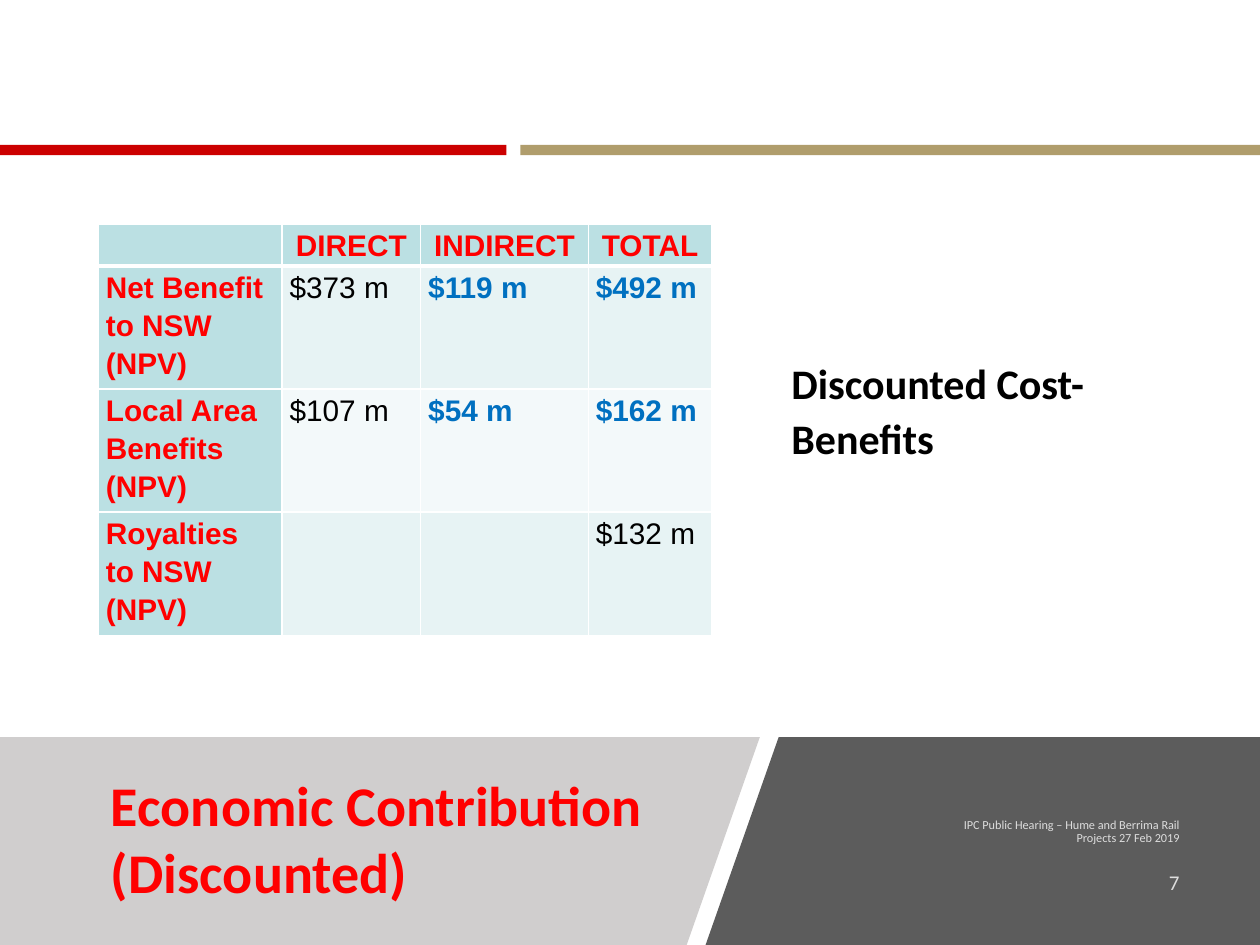
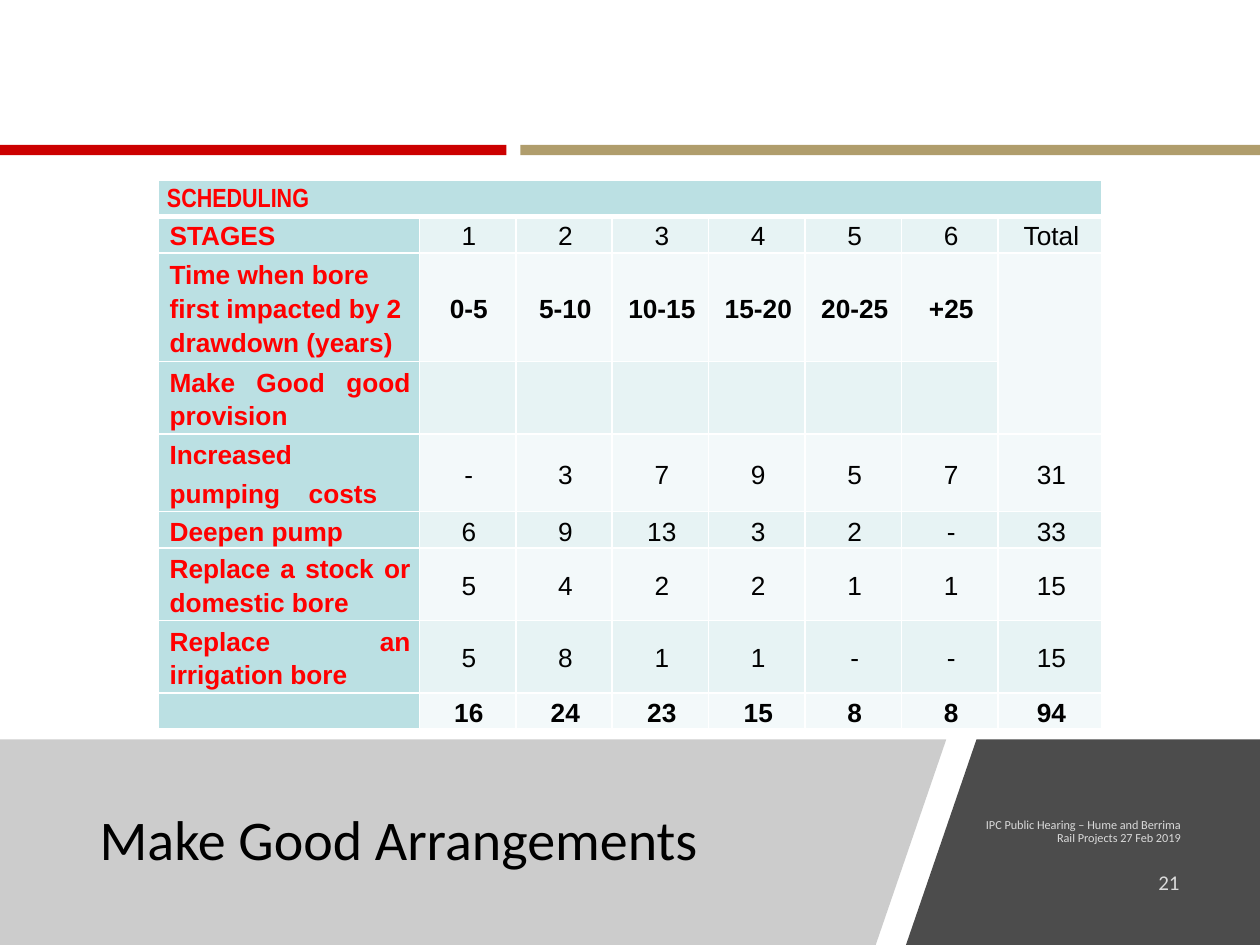
"""Build two hearing slides: discounted economics and make good stages."""
import dataclasses

import lxml.etree
import pptx
import pptx.dml.color
import pptx.enum.shapes
import pptx.enum.text
import pptx.oxml.ns
import pptx.util

Pt = pptx.util.Pt
qn = pptx.oxml.ns.qn
Align = pptx.enum.text.PP_ALIGN
Anchor = pptx.enum.text.MSO_ANCHOR


@dataclasses.dataclass(frozen=True)
class Theme:
    """Colours, fonts and type sizes of both slides."""
    red: str = "FF0000"
    blue: str = "0070C0"
    black: str = "000000"
    white: str = "FFFFFF"
    rule: str = "CC0000"
    gold: str = "B09D6C"
    head: str = "BBE0E3"
    odd: str = "E7F3F4"
    even: str = "F3F9FA"
    sans: str = "Calibri"
    grid: str = "Arial"
    slim: str = "Arial Narrow"
    title: int = 32
    body: int = 24
    page: int = 12
    foot: int = 7


THEME = Theme()
FOOT = "IPC Public Hearing – Hume and Berrima Rail Projects 27 Feb 2019"
RULES = [(0, 289.4, THEME.rule), (297.4, 422.6, THEME.gold)]

SLIDES = [
    {
        "title": "Economic Contribution (Discounted)",
        "box": (56.2, 435.6, 336.2, 86.4), "tint": THEME.red, "bold": True,
        "note": "Discounted Cost- Benefits", "page": "7",
        "foot": (525.6, 155.5), "top": 421.2,
        "dark": ((445, 720), (403.2, 720), "404040", 85),
        "light": ((0, 434.2), (0, 392.4), "D0CECE", 100),
        "table": {
            "at": (56.2, 128.2), "size": 17, "pad": 4.3, "nudge": 0,
            "cols": [105, 79.2, 95.8, 70.6], "rows": [23.8, 69.8, 69.8, 46.8],
            "cells": [
                ["", "DIRECT", "INDIRECT", "TOTAL"],
                ["Net Benefit to NSW (NPV)", "$373 m", "$119 m", "$492 m"],
                ["Local Area Benefits (NPV)", "$107 m", "$54 m", "$162 m"],
                ["Royalties to NSW (NPV)", "", "", "$132 m"],
            ],
            "bold": {(r, c) for r in (1, 2) for c in (2, 3)},
            "accent": THEME.blue, "anchor": Anchor.TOP, "merge": [],
            "align": (Align.CENTER, Align.LEFT, Align.LEFT), "left": set(),
            "head": THEME.grid,
        },
    },
    {
        "title": "Make Good Arrangements",
        "box": (49.7, 435.6, 455.8, 86.4), "tint": THEME.black, "bold": False,
        "note": "", "page": "21",
        "foot": (555.8, 126), "top": 422.6,
        "light": ((0, 540.7), (0, 500.4), "808080", 40),
        "dark": ((558, 720), (517.7, 720), "000000", 70),
        "table": {
            "at": (90.4, 103), "size": 15, "pad": 5, "nudge": 1.5,
            "cols": [149.2] + [55.15] * 6 + [59.4],
            "rows": [18.7, 18.7, 59, 38.9, 41.8, 18.7, 38.9, 38.9, 18.7],
            "cells": [
                ["SCHEDULING"] + [""] * 7,
                ["STAGES", "1", "2", "3", "4", "5", "6", "Total"],
                ["Time when bore first impacted by 2 drawdown (years)",
                 "0-5", "5-10", "10-15", "15-20", "20-25", "+25", ""],
                ["Make Good good provision"] + [""] * 7,
                ["Increased\npumping\tcosts",
                 "-", "3", "7", "9", "5", "7", "31"],
                ["Deepen pump", "6", "9", "13", "3", "2", "-", "33"],
                ["Replace a stock or domestic bore",
                 "5", "4", "2", "2", "1", "1", "15"],
                ["Replace an irrigation bore",
                 "5", "8", "1", "1", "-", "-", "15"],
                ["", "16", "24", "23", "15", "8", "8", "94"],
            ],
            "bold": {(r, c) for r in (2, 8) for c in range(1, 8)},
            "accent": THEME.black, "anchor": Anchor.MIDDLE,
            "merge": [((0, 0), (0, 7)), ((2, 7), (3, 7))],
            "align": (Align.JUSTIFY, Align.JUSTIFY, Align.CENTER),
            "left": {(2, 0)}, "head": THEME.slim,
        },
    },
]


def tone(code):
    """Return a colour from its hex code."""
    return pptx.dml.color.RGBColor.from_string(code)


def fade(node, share):
    """Make the first plain colour in a node partly clear."""
    mark = next(node.iter(qn("a:srgbClr")))
    lxml.etree.SubElement(mark, qn("a:alpha"), val=str(share * 1000))


def write(para, text, size, tint, face=THEME.sans, bold=False):
    """Add one styled run."""
    run = para.add_run()
    run.text = text
    run.font.size, run.font.name, run.font.bold = Pt(size), face, bold
    run.font.color.rgb = tone(tint)
    return run


def paint(shape, tint, share=100):
    """Give a shape a flat fill without line or shadow."""
    shape.shadow.inherit = False
    shape.fill.solid()
    shape.fill.fore_color.rgb = tone(tint)
    shape.line.fill.background()
    if share < 100:
        fade(shape._element.spPr, share)


def add_rules(slide):
    """Draw the two coloured rules near the top."""
    for left, wide, tint in RULES:
        kind = pptx.enum.shapes.MSO_SHAPE.RECTANGLE
        paint(slide.shapes.add_shape(
            kind, Pt(left), Pt(82.8), Pt(wide), Pt(5.8)), tint)


def add_band(slide, top, band):
    """Draw a slanted band from its upper and lower edges."""
    (ul, ur), (ll, lr), tint, share = band
    form = slide.shapes.build_freeform(Pt(ul), Pt(top), scale=1.0)
    form.add_line_segments(
        [(Pt(ur), Pt(top)), (Pt(lr), Pt(540)), (Pt(ll), Pt(540))], close=True)
    paint(form.convert_to_shape(), tint, share)


def fill_holder(holder, box, text, size, tint, bold):
    """Place a placeholder and write its text."""
    holder.left, holder.top, holder.width, holder.height = map(Pt, box)
    frame = holder.text_frame
    frame.word_wrap = True
    frame.auto_size = pptx.enum.text.MSO_AUTO_SIZE.NONE
    frame.vertical_anchor = Anchor.MIDDLE
    para = frame.paragraphs[0]
    para.alignment = Align.LEFT
    write(para, text, size, tint, bold=bold)
    return frame


def add_note(holder, text):
    """Write the side note without a bullet."""
    frame = fill_holder(holder, (445, 100.1, 236.9, 292.3), text,
                        THEME.body, THEME.black, True)
    frame.margin_bottom = Pt(30)
    para = frame.paragraphs[0]
    props = para._p.get_or_add_pPr()
    props.set("marL", "0")
    props.set("indent", "0")
    lxml.etree.SubElement(props, qn("a:buNone"))
    para.line_spacing = 1.1
    para.space_before = Pt(0)


def add_foot(slide, box, text, size, space):
    """Write a right-aligned footer line."""
    frame = slide.shapes.add_textbox(*map(Pt, box)).text_frame
    frame.word_wrap = True
    para = frame.paragraphs[0]
    para.alignment, para.line_spacing = Align.RIGHT, space
    fade(write(para, text, size, THEME.white)._r, 80)


def edge(cell, first):
    """Draw white cell borders, heavier under the first row."""
    props = cell._tc.get_or_add_tcPr()
    for side in "LRTB":
        heavy = (first and side == "B")
        line = lxml.etree.SubElement(
            props, qn("a:ln" + side), w=str(Pt(3 if heavy else 1)))
        fill = lxml.etree.SubElement(line, qn("a:solidFill"))
        lxml.etree.SubElement(fill, qn("a:srgbClr"), val=THEME.white)


def fill_cell(cell, text, row, col, grid):
    """Format one cell and write its lines."""
    top, side = row == 0, col == 0
    edge(cell, top)
    cell.fill.solid()
    shade = THEME.odd if row % 2 else THEME.even
    cell.fill.fore_color.rgb = tone(THEME.head if top or side else shade)
    cell.margin_left = Pt(grid["pad"] + (grid["nudge"] if row else 0))
    cell.margin_right = Pt(grid["pad"])
    cell.margin_top = cell.margin_bottom = 0
    cell.vertical_anchor = grid["anchor"]
    frame = cell.text_frame
    if not text:
        end = frame.paragraphs[0]._p.get_or_add_endParaRPr()
        end.set("sz", str(grid["size"] * 100))
        return
    strong = (row, col) in grid["bold"]
    tint = grid["accent"] if strong else THEME.black
    align = grid["align"][0 if top else 1 if side else 2]
    for num, line in enumerate(text.split("\n")):
        para = frame.add_paragraph() if num else frame.paragraphs[0]
        para.alignment = Align.LEFT if (row, col) in grid["left"] else align
        para.line_spacing = 1.15
        if num:
            para.space_before = Pt(3)
        if "\t" in line:
            tabs = lxml.etree.SubElement(
                para._p.get_or_add_pPr(), qn("a:tabLst"))
            lxml.etree.SubElement(
                tabs, qn("a:tab"), pos=str(Pt(79.5)), algn="l")
        write(para, line, grid["size"], THEME.red if top or side else tint,
              grid["head"] if top else THEME.grid, top or side or strong)


def add_grid(slide, grid):
    """Build a table from its rows of text."""
    cols, rows = grid["cols"], grid["rows"]
    size = (*grid["at"], sum(cols), sum(rows))
    table = slide.shapes.add_table(len(rows), len(cols), *map(Pt, size)).table
    table.horz_banding = False
    for col, wide in zip(table.columns, cols):
        col.width = Pt(wide)
    for row, high in zip(table.rows, rows):
        row.height = Pt(high)
    for r, line in enumerate(grid["cells"]):
        for c, text in enumerate(line):
            fill_cell(table.cell(r, c), text, r, c, grid)
    for start, stop in grid["merge"]:
        table.cell(*start).merge(table.cell(*stop))


def add_slide(deck, data):
    """Build one slide from its content."""
    slide = deck.slides.add_slide(deck.slide_layouts[1 if data["note"] else 5])
    add_rules(slide)
    for band in ("dark", "light"):
        add_band(slide, data["top"], data[band])
    for holder in list(slide.placeholders):
        slide.shapes._spTree.append(holder._element)
    fill_holder(slide.shapes.title, data["box"], data["title"],
                THEME.title, data["tint"], data["bold"])
    if data["note"]:
        add_note(slide.placeholders[1], data["note"])
    left, wide = data["foot"]
    add_foot(slide, (left, 464.4, wide, 28.8), FOOT, THEME.foot, 0.9)
    add_foot(slide, (601.9, 493.2, 79.2, 28.8), data["page"], THEME.page, 1.0)
    add_grid(slide, data["table"])


def main():
    """Create and save the deck."""
    deck = pptx.Presentation()
    deck.slide_width, deck.slide_height = Pt(720), Pt(540)
    for data in SLIDES:
        add_slide(deck, data)
    deck.save("out.pptx")


if __name__ == "__main__":
    main()
